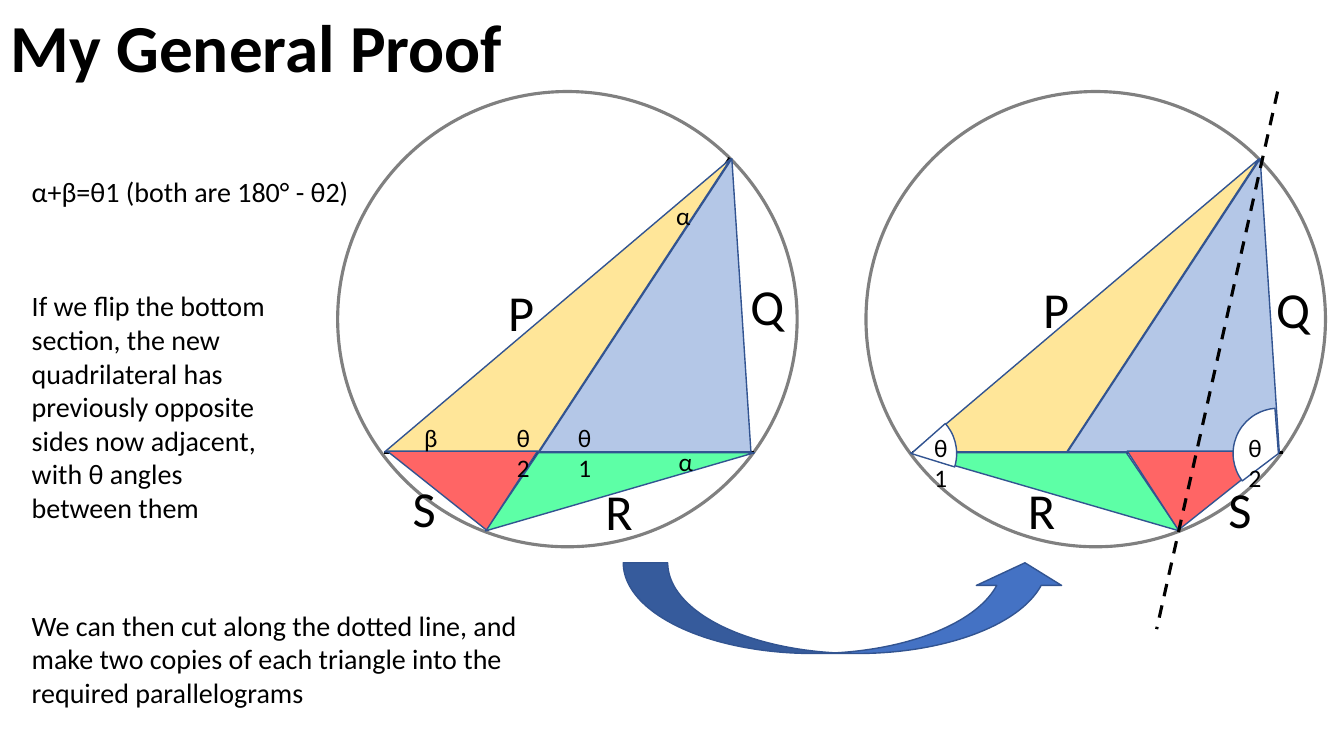
from dataclasses import dataclass

from lxml.etree import SubElement
from pptx import Presentation
from pptx.dml.color import RGBColor
from pptx.enum.dml import MSO_LINE
from pptx.enum.shapes import MSO_CONNECTOR, MSO_SHAPE as Preset
from pptx.enum.text import MSO_AUTO_SIZE as AutoSize, PP_ALIGN as Align
from pptx.oxml.ns import qn
from pptx.util import Inches, Pt


@dataclass(frozen=True)
class Theme:
    font: str = "Calibri"
    ink: str = "000000"
    outline: str = "325491"
    circle: str = "808080"
    yellow: str = "FFE699"
    green: str = "5DFFA6"
    blue: str = "B4C7E7"
    red: str = "FF6565"
    white: str = "FFFFFF"
    arrow: str = "4472C4"
    title: int = 48
    body: int = 20
    side: int = 36
    angle: int = 18
    thin: float = 1
    thick: float = 2.25


THEME = Theme()
COLUMNS, ROWS = 16, 9
SLIDE_WIDTH, SLIDE_HEIGHT = Inches(13.333), Inches(7.5)

FIGURE_TOP = 1.09
LEFT_FIGURE, RIGHT_FIGURE = 4.02, 10.31
MIRROR_SUM = 5.49
RED_LEFT, RED_WIDTH, RED_APEX = 0.59, 1.79, 0.34

LABEL_WIDTHS = {"α": 0.34, "β": 0.32, "θ1": 0.44, "θ2": 0.44,
                "P": 0.55, "Q": 0.65, "R": 0.58, "S": 0.52}
LEFT_LABELS = [
    ("α", 7.93, 2.33), ("α", 7.96, 5.26), ("β", 4.93, 4.97),
    ("θ2", 6.01, 4.97), ("θ1", 6.74, 4.97),
    ("P", 5.93, 3.29), ("Q", 8.81, 3.22), ("R", 7.08, 5.66), ("S", 4.79, 5.62),
]
RIGHT_LABELS = [
    ("θ2", 14.72, 5.09), ("θ1", 10.98, 5.09),
    ("P", 12.3, 3.25), ("Q", 15.07, 3.25), ("R", 12.11, 5.64), ("S", 14.5, 5.63),
]
NOTES = [
    ("α+β=θ1 (both are 180° - θ2)", 2.02, 6.29, 0.53),
    ("If we flip the bottom section, the new quadrilateral has previously "
     "opposite sides now adjacent, with θ angles between them", 3.38, 3.16, 2.95),
    ("We can then cut along the dotted line, and make two copies of each "
     "triangle into the required parallelograms", 7.18, 6.24, 1.33),
]


def across(columns):
    return round(SLIDE_WIDTH * columns / COLUMNS)


def down(rows):
    return round(SLIDE_HEIGHT * rows / ROWS)


def color(value):
    return RGBColor.from_string(value)


def add_text(shapes, text, left, top, width, height, *, size, bold=False,
             align=Align.LEFT, wrap=True):
    box = shapes.add_textbox(across(left), down(top), across(width), down(height))
    frame = box.text_frame
    frame.word_wrap = wrap
    frame.auto_size = AutoSize.SHAPE_TO_FIT_TEXT
    paragraph = frame.paragraphs[0]
    paragraph.alignment = align
    run = paragraph.add_run()
    run.text = text
    run.font.name = THEME.font
    run.font.size = Pt(size)
    run.font.bold = bold
    run.font.color.rgb = color(THEME.ink)


def paint(shape, fill, line, weight):
    shape.shadow.inherit = False
    if fill:
        shape.fill.solid()
        shape.fill.fore_color.rgb = color(fill)
    else:
        shape.fill.background()
    shape.line.color.rgb = color(line)
    shape.line.width = Pt(weight)


def add_preset(shapes, kind, left, top, width, height, *, fill=None,
               line=THEME.outline, weight=THEME.thin, adjustments=(), rotation=0):
    shape = shapes.add_shape(kind, across(left), down(top), across(width), down(height))
    for index, value in enumerate(adjustments):
        shape.adjustments[index] = value
    shape.rotation = rotation
    paint(shape, fill, line, weight)


def add_polygon(shapes, origin, points, fill):
    corners = [(across(origin + x), down(FIGURE_TOP + y)) for x, y in points]
    builder = shapes.build_freeform(*corners[0])
    builder.add_line_segments(corners[1:], close=True)
    paint(builder.convert_to_shape(), fill, THEME.outline, THEME.thin)


def add_segment(shapes, origin, start, end, dash=None):
    (x1, y1), (x2, y2) = start, end
    connector = shapes.add_connector(
        MSO_CONNECTOR.STRAIGHT, across(origin + x1), down(FIGURE_TOP + y1),
        across(origin + x2), down(FIGURE_TOP + y2))
    connector.line.color.rgb = color(THEME.ink)
    connector.line.width = Pt(THEME.thick)
    if dash:
        connector.line.dash_style = dash
    SubElement(connector.element.spPr, qn("a:effectLst"))


def add_quadrilateral(shapes, origin, flipped):
    def bottom_x(x):
        return MIRROR_SUM - x if flipped else x

    add_preset(shapes, Preset.OVAL, origin, FIGURE_TOP, 5.47, 5.42,
               line=THEME.circle, weight=THEME.thick)
    add_segment(shapes, origin, (0.55, 4.3), (4.96, 4.3))
    if not flipped:
        add_segment(shapes, origin, (4.67, 0.79), (1.78, 5.22))
    add_polygon(shapes, origin, [(0.56, 4.29), (4.68, 0.8), (2.39, 4.29)], THEME.yellow)
    add_polygon(shapes, origin,
                [(bottom_x(x), y) for x, y in [(4.96, 4.3), (1.76, 5.23), (2.39, 4.3)]],
                THEME.green)
    add_preset(shapes, Preset.ISOSCELES_TRIANGLE, origin + 2.4, FIGURE_TOP + 0.8,
               2.52, 3.49, fill=THEME.blue, adjustments=[0.91])
    red_left = bottom_x(RED_LEFT + RED_WIDTH) if flipped else RED_LEFT
    add_preset(shapes, Preset.ISOSCELES_TRIANGLE, origin + red_left, FIGURE_TOP + 4.28,
               RED_WIDTH, 0.94, fill=THEME.red, rotation=180,
               adjustments=[1 - RED_APEX if flipped else RED_APEX])


def add_angle_wedges(shapes, origin):
    for left, angles in [(0, (191.14, 10.32)), (4.37, (85.75, 159.35))]:
        add_preset(shapes, Preset.PIE, origin + left, FIGURE_TOP + 3.77, 1.08, 1.08,
                   fill=THEME.white, adjustments=angles)


def add_labels(shapes, labels):
    for text, left, top in labels:
        is_side = text in "PQRS"
        add_text(shapes, text, left, top, LABEL_WIDTHS[text], 0.85 if is_side else 0.38,
                 size=THEME.side if is_side else THEME.angle,
                 align=Align.CENTER, wrap=len(text) > 1)


def main():
    presentation = Presentation()
    presentation.slide_width, presentation.slide_height = SLIDE_WIDTH, SLIDE_HEIGHT
    slide = presentation.slides.add_slide(presentation.slide_layouts[6])
    shapes = slide.shapes

    add_text(shapes, "My General Proof", 0.01, 0, 6.16, 1.09,
             size=THEME.title, bold=True, wrap=False)

    left_figure = shapes.add_group_shape().shapes
    add_quadrilateral(left_figure, LEFT_FIGURE, flipped=False)
    add_labels(left_figure, LEFT_LABELS)

    right_figure = shapes.add_group_shape().shapes
    add_quadrilateral(right_figure, RIGHT_FIGURE, flipped=True)
    add_angle_wedges(right_figure, RIGHT_FIGURE)
    add_segment(right_figure, RIGHT_FIGURE, (4.9, 0), (3.46, 6.4), dash=MSO_LINE.DASH)
    add_labels(right_figure, RIGHT_LABELS)

    for text, top, width, height in NOTES:
        add_text(shapes, text, 0.26, top, width, height, size=THEME.body)
    add_preset(shapes, Preset.CURVED_UP_ARROW, 7.42, 6.7, 5.29, 1.08,
               fill=THEME.arrow, adjustments=[0.49, 0.94, 0.25])

    presentation.save("out.pptx")


if __name__ == "__main__":
    main()
